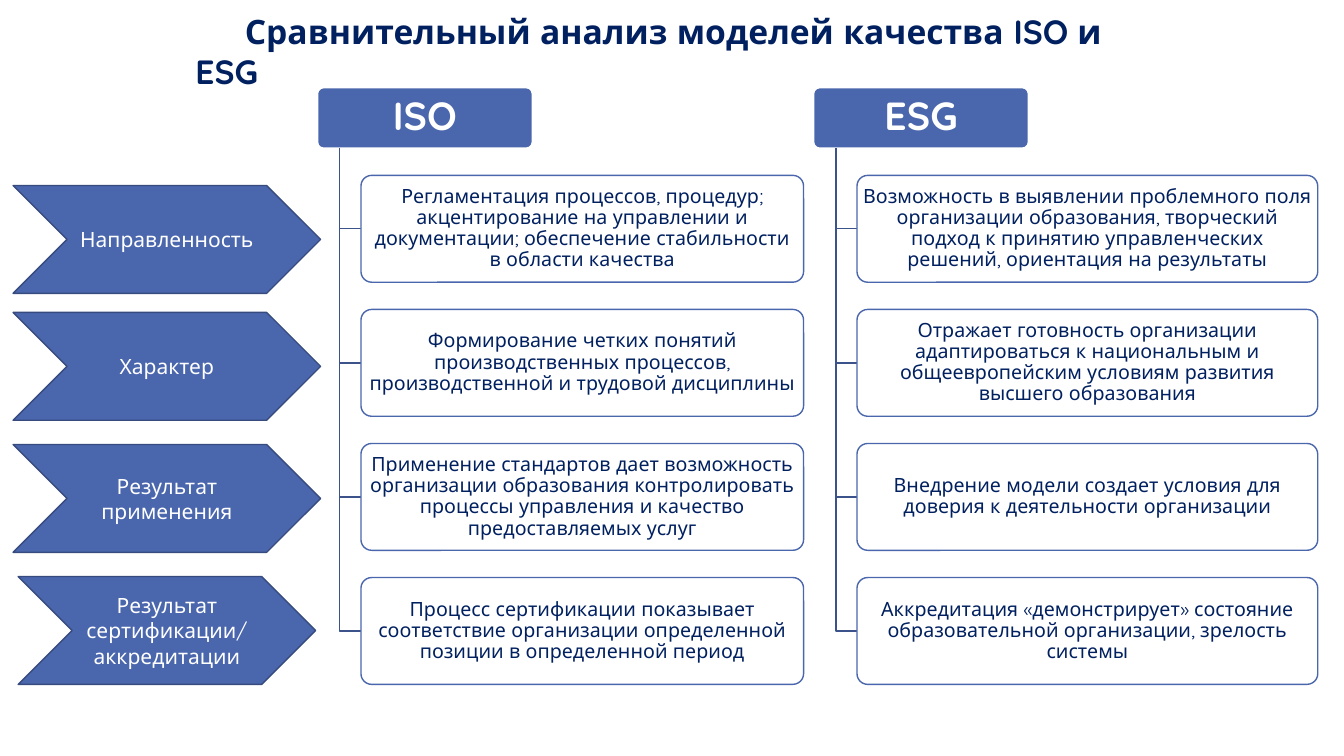
from pptx import Presentation
from pptx import util as u
from pptx.dml.color import RGBColor
from pptx.enum import shapes, text

PX = 9144
NAVY, BLUE, WHITE = "002060", "4A66AC", "FFFFFF"
STEM, EDGE = "3B528A", "374B7F"
ROWS = ["Направленность", "Характер", "Результат применения",
        "Результат сертификации/аккредитации"]
ARROWS = [(13, 184, 305, 107), (13, 310, 305, 107),
          (13, 441, 305, 107), (18, 572, 295, 107)]
MODELS = [
    ("ISO", 315, 439, [
        "Регламентация процессов, процедур; акцентирование на управлении и "
        "документации; обеспечение стабильности в области качества",
        "Формирование четких понятий производственных процессов, "
        "производственной и трудовой дисциплины",
        "Применение стандартов дает возможность организации образования "
        "контролировать процессы управления и качество предоставляемых услуг",
        "Процесс сертификации показывает соответствие организации "
        "определенной позиции в определенной период"]),
    ("ESG", 807, 457, [
        "Возможность в выявлении проблемного поля организации образования, "
        "творческий подход к принятию управленческих решений, ориентация на результаты",
        "Отражает готовность организации адаптироваться к национальным и "
        "общеевропейским условиям развития высшего образования",
        "Внедрение модели создает условия для доверия к деятельности организации",
        "Аккредитация «демонстрирует» состояние образовательной организации, "
        "зрелость системы"]),
]


def color(value):
    return RGBColor.from_string(value)


def assign(target, values):
    for name, value in values.items():
        setattr(target, name, value)


class Board:
    """Draws text, boxes and elbow lines on one slide in a shared style."""

    def __init__(self, page, font):
        self.page = page
        self.font = font

    def label(self, shape, words, size, ink, insets, bold=False, spacing=1.0,
              align=text.PP_ALIGN.CENTER):
        frame = shape.text_frame
        left, top, right, bottom = (inset * PX for inset in insets)
        assign(frame, {"word_wrap": True, "vertical_anchor": text.MSO_ANCHOR.MIDDLE,
                       "margin_left": left, "margin_top": top,
                       "margin_right": right, "margin_bottom": bottom})
        para = frame.paragraphs[0]
        assign(para, {"alignment": align, "line_spacing": spacing})
        span = para.add_run()
        span.text = words
        assign(span.font, {"name": self.font, "size": u.Pt(size), "bold": bold})
        span.font.color.rgb = color(ink)
        return para

    def outline(self, shape, line):
        shape.shadow.inherit = False
        shape.line.color.rgb = color(line)
        shape.line.width = u.Pt(1)

    def title(self, words, place, indent):
        box = self.page.shapes.add_textbox(*(length * PX for length in place))
        para = self.label(box, words, 24, NAVY, (10, 5, 10, 45), bold=True,
                          align=text.PP_ALIGN.LEFT)
        para._p.get_or_add_pPr().set("indent", str(indent * PX))

    def box(self, kind, place, fill, line, words, size, ink, insets, **style):
        shape = self.page.shapes.add_shape(kind, *(length * PX for length in place))
        if kind == shapes.MSO_SHAPE.ROUNDED_RECTANGLE:
            shape.adjustments[0] = 0.1
        shape.fill.solid()
        shape.fill.fore_color.rgb = color(fill)
        self.outline(shape, line)
        self.label(shape, words, size, ink, insets, **style)

    def elbow(self, left, top, right, bottom):
        builder = self.page.shapes.build_freeform(left, top, scale=PX)
        builder.add_line_segments([(left, bottom), (right, bottom)], close=False)
        shape = builder.convert_to_shape()
        shape.fill.background()
        self.outline(shape, STEM)


def main():
    deck = Presentation()
    assign(deck, {"slide_width": 1333 * PX, "slide_height": 750 * PX})
    board = Board(deck.slides.add_slide(deck.slide_layouts[6]), "Quicksand")
    board.title("Сравнительный анализ моделей качества ISO и ESG",
                (184, 25, 966, 91), 49)

    rounded = shapes.MSO_SHAPE.ROUNDED_RECTANGLE
    head_top, head_height = 87, 60
    first_row, row_step, row_height = 174, 133, 106
    for name, left, width, notes in MODELS:
        board.box(rounded, (left, head_top, 213, head_height), BLUE, WHITE,
                  name, 28, WHITE, (6, 4, 6, 4), bold=True, spacing=0.9)
        for row, note in enumerate(notes):
            top = first_row + row * row_step
            board.elbow(left + 22, head_top + head_height,
                        left + 43, top + row_height // 2)
            board.box(rounded, (left + 43, top, width, row_height), WHITE, BLUE,
                      note, 14, NAVY, (3, 2, 3, 2), spacing=0.9)

    for caption, place in zip(ROWS, ARROWS):
        board.box(shapes.MSO_SHAPE.CHEVRON, place, BLUE, EDGE,
                  caption, 15, WHITE, (10, 5, 10, 5))
    deck.save("out.pptx")


if __name__ == "__main__":
    main()
